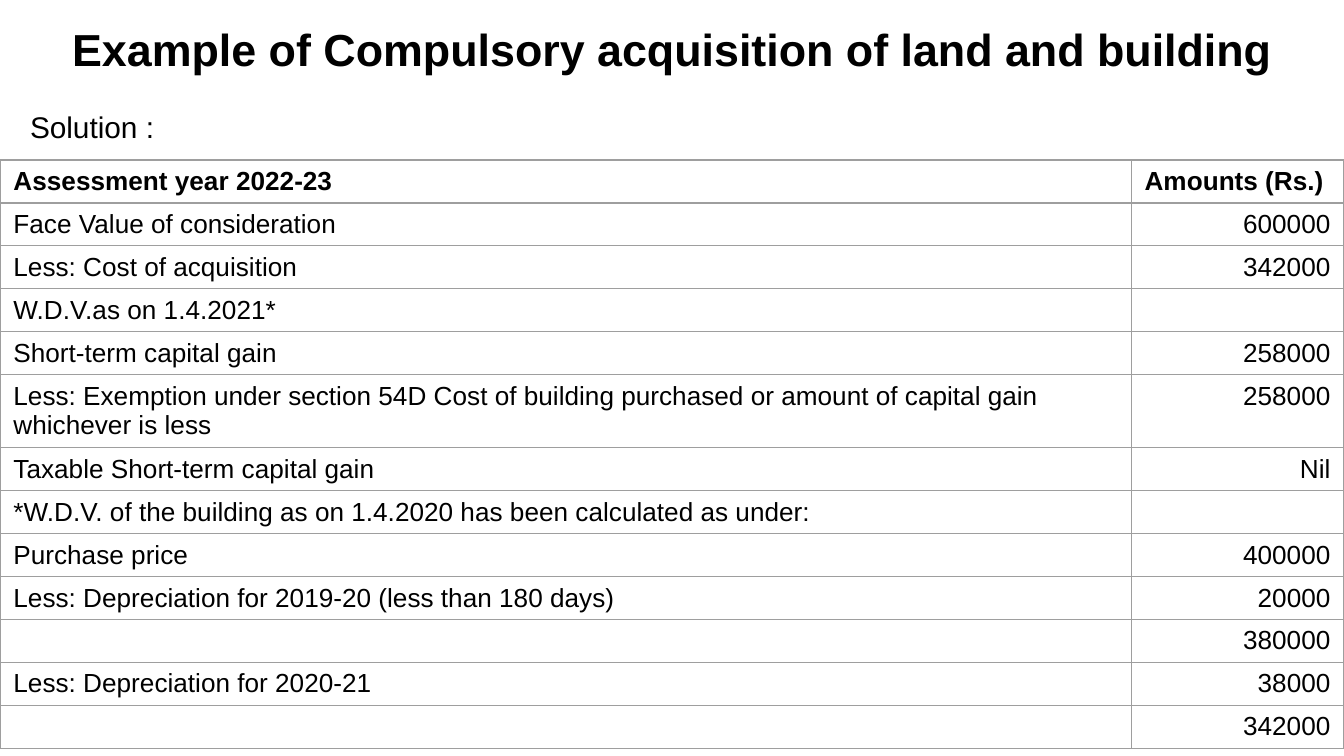
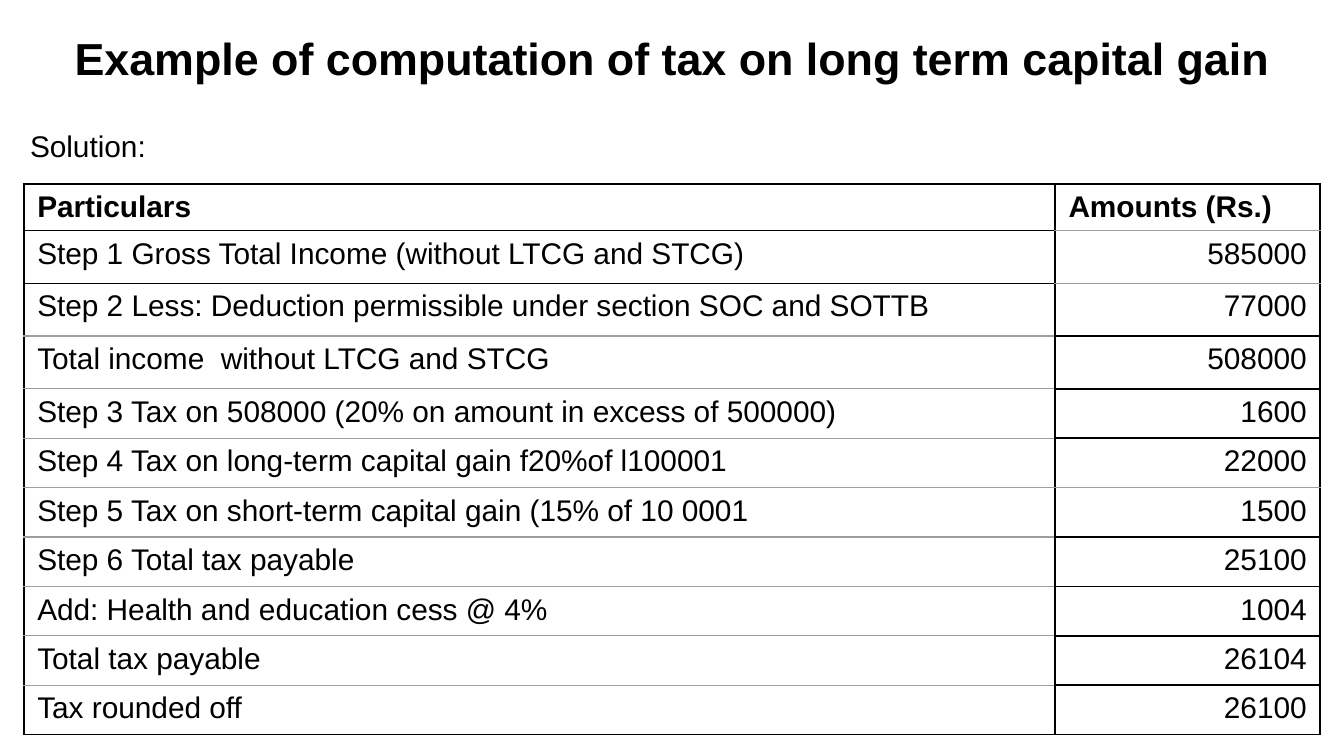
from lxml import etree
from pptx import Presentation
from pptx.dml.color import RGBColor
from pptx.enum.text import MSO_ANCHOR, PP_ALIGN
from pptx.oxml.ns import qn
from pptx.util import Pt

LEFT, CENTER, RIGHT = PP_ALIGN.LEFT, PP_ALIGN.CENTER, PP_ALIGN.RIGHT
MIDDLE, TOP = MSO_ANCHOR.MIDDLE, MSO_ANCHOR.TOP
COLORS = {"text": "000000", "strong": "000000", "soft": "9E9E9E"}
LINE_WIDTHS = {"strong": Pt(1), "soft": Pt(0.75)}
FONT = "Arial"
PAGE_WIDTH, PAGE_HEIGHT = 720, 405

ACQUISITION_ROWS = [
    ("Assessment year 2022-23", "Amounts (Rs.)"),
    ("Face Value of consideration", "600000"),
    ("Less: Cost of acquisition", "342000"),
    ("W.D.V.as on 1.4.2021*", ""),
    ("Short-term capital gain", "258000"),
    ("Less: Exemption under section 54D Cost of building purchased or "
     "amount of capital gain whichever is less", "258000"),
    ("Taxable Short-term capital gain", "Nil"),
    ("*W.D.V. of the building as on 1.4.2020 has been calculated as under:", ""),
    ("Purchase price", "400000"),
    ("Less: Depreciation for 2019-20 (less than 180 days)", "20000"),
    ("", "380000"),
    ("Less: Depreciation for 2020-21", "38000"),
    ("", "342000"),
]
TAX_ROWS = [
    ("Particulars", "Amounts (Rs.)"),
    ("Step 1 Gross Total Income (without LTCG and STCG)", "585000"),
    ("Step 2 Less: Deduction permissible under section SOC and SOTTB", "77000"),
    ("Total income  without LTCG and STCG", "508000"),
    ("Step 3 Tax on 508000 (20% on amount in excess of 500000)", "1600"),
    ("Step 4 Tax on long-term capital gain f20%of l100001", "22000"),
    ("Step 5 Tax on short-term capital gain (15% of 10 0001", "1500"),
    ("Step 6 Total tax payable", "25100"),
    ("Add: Health and education cess @ 4%", "1004"),
    ("Total tax payable", "26104"),
    ("Tax rounded off", "26100"),
]
TAX_STRONG_LINES = ({0, 1, 2, 11}, {0, 3, 4, 5, 7, 8, 9, 10, 11})


def style_paragraph(para, size, bold=False, align=LEFT):
    para.alignment = align
    font = para.font
    font.name, font.size, font.bold = FONT, Pt(size), bold
    font.color.rgb = RGBColor.from_string(COLORS["text"])


def add_text(page, text, top, width, height, size, bold=False, align=LEFT, anchor=TOP):
    box = page.shapes.add_textbox(0, Pt(top), Pt(width), Pt(height))
    frame = box.text_frame
    frame.word_wrap = True
    frame.vertical_anchor = anchor
    para = frame.paragraphs[0]
    para.text = text
    style_paragraph(para, size, bold, align)
    return para


def add_heading(page, title, title_height, solution, body_width):
    add_text(page, title, 0, PAGE_WIDTH, title_height, 24, True, CENTER, MIDDLE)
    para = add_text(page, solution, title_height, body_width, 343, 16)
    para.line_spacing = 1.15
    para.space_before = Pt(3.6)
    para._p.get_or_add_pPr().set("marL", str(Pt(9)))


def set_border(cell, side, kind):
    line = etree.SubElement(cell._tc.get_or_add_tcPr(), qn(f"a:ln{side}"),
                            w=str(LINE_WIDTHS[kind]))
    fill = etree.SubElement(line, qn("a:solidFill"))
    etree.SubElement(fill, qn("a:srgbClr"), val=COLORS[kind])


def fill_cell(cell, text, size, bold, align):
    cell.margin_bottom = Pt(2)
    para = cell.text_frame.paragraphs[0]
    para.text = text
    style_paragraph(para, size, bold, align)
    if not text:
        para._p.get_or_add_endParaRPr().set("sz", str(size * 100))


def add_amounts(page, rows, left, top, widths, heights, size, sides, strong_lines):
    frame = page.shapes.add_table(len(rows), len(widths), Pt(left), Pt(top),
                                  Pt(sum(widths)), Pt(sum(heights)))
    table = frame.table
    table.first_row = table.horz_banding = False
    for column, width in zip(table.columns, widths):
        column.width = Pt(width)
    for row_index, (row, height) in enumerate(zip(rows, heights)):
        table.rows[row_index].height = Pt(height)
        for column_index, text in enumerate(row):
            cell = table.cell(row_index, column_index)
            header = row_index == 0
            align = RIGHT if column_index and not header else LEFT
            fill_cell(cell, text, size, header, align)
            strong = strong_lines[column_index]
            for side in "LR":
                set_border(cell, side, sides)
            for side, line_index in (("T", row_index), ("B", row_index + 1)):
                set_border(cell, side, "strong" if line_index in strong else "soft")
            cell.fill.background()


def main():
    deck = Presentation()
    deck.slide_width, deck.slide_height = Pt(PAGE_WIDTH), Pt(PAGE_HEIGHT)
    blank = deck.slide_layouts[6]

    page = deck.slides.add_slide(blank)
    add_heading(page, "Example of Compulsory acquisition of land and building",
                52, "Solution :", 711.5)
    add_amounts(page, ACQUISITION_ROWS, 0, 85.75, (606, 114),
                [23] * 5 + [38.5] + [23] * 7, 14, "soft", (set(), set()))

    page = deck.slides.add_slide(blank)
    add_heading(page, "Example of computation of tax on long term capital gain",
                62.25, "Solution:", PAGE_WIDTH)
    add_amounts(page, TAX_ROWS, 12.75, 98.6, (552.5, 142),
                [25] + [28.25] * 3 + [26.5] * 7, 16, "strong", TAX_STRONG_LINES)

    deck.save("out.pptx")


if __name__ == "__main__":
    main()
